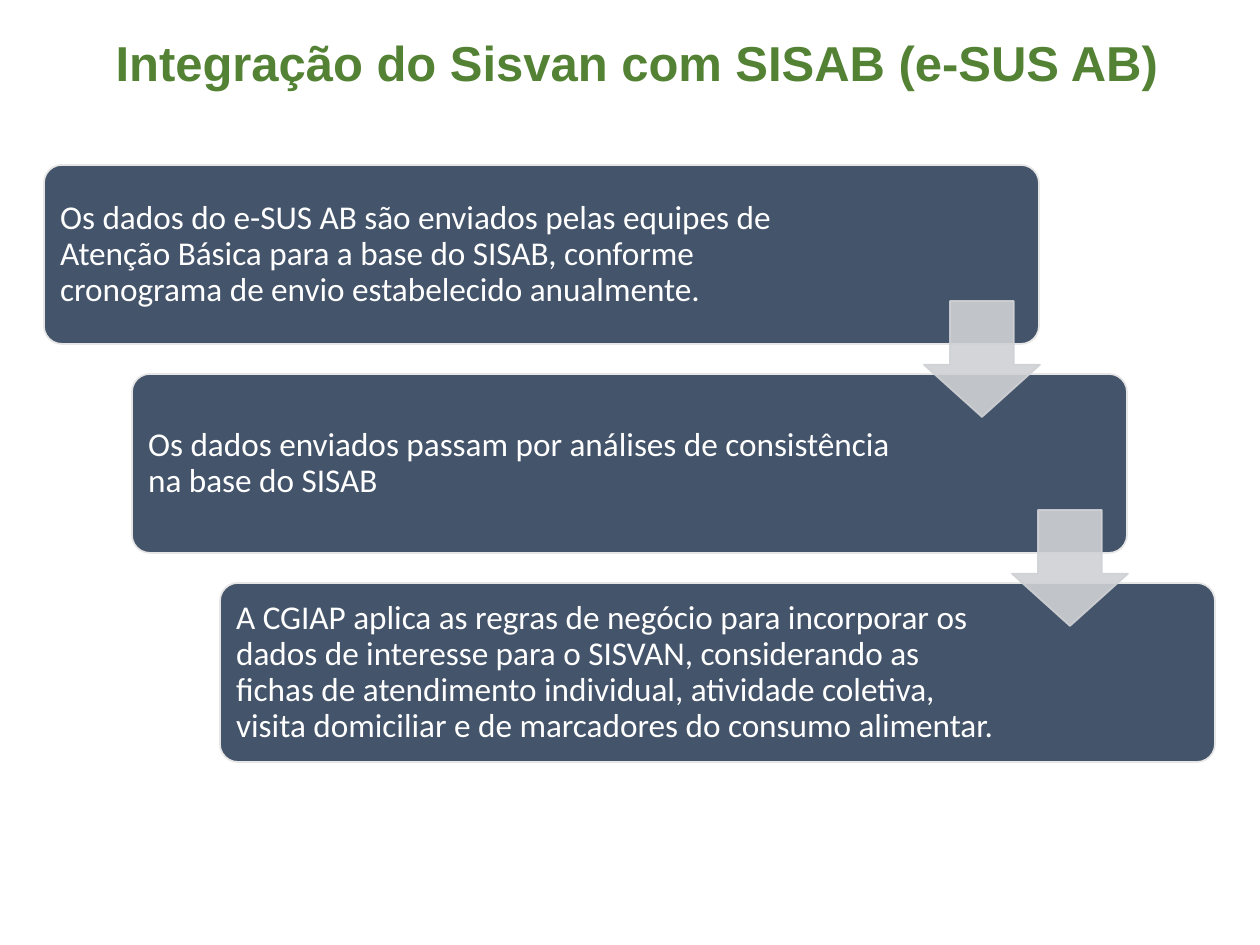
from lxml import etree
from pptx import Presentation
from pptx import util as u
from pptx.dml.color import RGBColor
from pptx.enum import shapes, text
from pptx.oxml.ns import qn

heading = "Integração do Sisvan com SISAB (e-SUS AB)"
steps = [
    ("Os dados do e-SUS AB são enviados pelas equipes de Atenção Básica para a base do "
     "SISAB, conforme cronograma de envio estabelecido anualmente.", 190),
    ("Os dados enviados passam por análises de consistência na base do SISAB", 210),
    ("A CGIAP aplica as regras de negócio para incorporar os dados de interesse para o "
     "SISVAN, considerando as fichas de atendimento individual, atividade coletiva, "
     "visita domiciliar e de marcadores do consumo alimentar.", 210),
]

GREEN = RGBColor(0x54, 0x82, 0x35)
SLATE = RGBColor(0x44, 0x54, 0x6A)
PALE = RGBColor(0xE7, 0xE6, 0xE6)
SILVER = RGBColor(0xCF, 0xD1, 0xD4)
WHITE = RGBColor(0xFF, 0xFF, 0xFF)

STEP_LEFT, STEP_TOP, STEP_WIDTH, STEP_HEIGHT = 44, 165, 995, 179
ARROW_LEFT, ARROW_TOP, ARROW_SIZE = 924, 301, 116
SHIFT_X, SHIFT_Y = 88, 209
INSET = 11


def px(length):
    return u.Emu(round(length * 914400 / 126))


def write(frame, words, *, size, font, color, bold=False, spacing=1.0, after=0,
          anchor=text.MSO_ANCHOR.TOP):
    frame.word_wrap = True
    frame.vertical_anchor = anchor
    frame.text = words
    paragraph = frame.paragraphs[0]
    paragraph.alignment = text.PP_ALIGN.LEFT
    paragraph.line_spacing = spacing
    paragraph.space_after = u.Pt(after)
    paragraph.font.size = u.Pt(size)
    paragraph.font.name = font
    paragraph.font.bold = bold
    paragraph.font.color.rgb = color


def draw(kind, left, top, width, height, adjustments, fill, line):
    drawn = slide.shapes.add_shape(kind, px(left), px(top), px(width), px(height))
    for index, value in enumerate(adjustments):
        drawn.adjustments[index] = value
    drawn.shadow.inherit = False
    drawn.fill.solid()
    drawn.fill.fore_color.rgb = fill
    drawn.line.color.rgb = line
    drawn.line.width = u.Pt(1)
    return drawn


prs = Presentation()
prs.slide_width, prs.slide_height = u.Inches(10), u.Inches(7.5)
slide = prs.slides.add_slide(prs.slide_layouts[5])

title = slide.shapes.title
title.left, title.top, title.width, title.height = px(103), px(26), px(1080), px(72)
write(title.text_frame, heading, size=28, font="Arial", color=GREEN, bold=True)

for row, (words, right_inset) in enumerate(steps):
    step = draw(shapes.MSO_SHAPE.ROUNDED_RECTANGLE,
                STEP_LEFT + row * SHIFT_X, STEP_TOP + row * SHIFT_Y,
                STEP_WIDTH, STEP_HEIGHT, [0.1], SLATE, PALE)
    step.text_frame.margin_left = px(INSET)
    step.text_frame.margin_right = px(right_inset)
    write(step.text_frame, words, size=19, font="Calibri", color=WHITE, spacing=0.9,
          after=6.65, anchor=text.MSO_ANCHOR.MIDDLE)

for row in range(len(steps) - 1):
    arrow = draw(shapes.MSO_SHAPE.DOWN_ARROW,
                 ARROW_LEFT + row * SHIFT_X, ARROW_TOP + row * SHIFT_Y,
                 ARROW_SIZE, ARROW_SIZE, [0.55, 0.45], SILVER, SILVER)
    for color in arrow.element.spPr.iter(qn("a:srgbClr")):
        etree.SubElement(color, qn("a:alpha"), val="90000")

prs.save("out.pptx")
